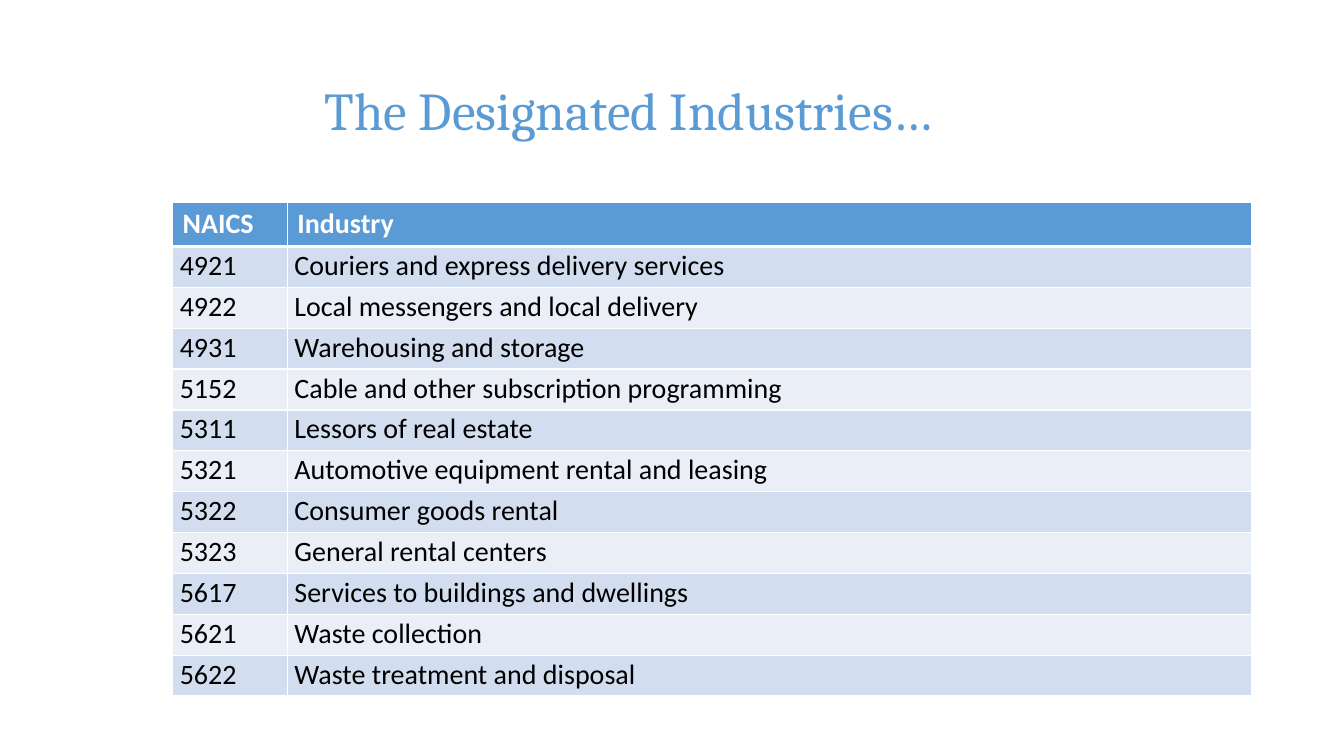
from dataclasses import dataclass

from lxml import etree
from pptx import Presentation
from pptx import util as u
from pptx.dml.color import RGBColor
from pptx.enum import text
from pptx.oxml.ns import qn


@dataclass(frozen=True)
class Theme:
    accent: str = "5B9BD5"
    bands: tuple[str, str] = ("D2DEEF", "EAEFF7")
    white: str = "FFFFFF"
    black: str = "000000"
    title_font: str = "Cambria"
    table_font: str = "Calibri"
    title_size: int = 38
    table_size: int = 20


@dataclass(frozen=True)
class Industry:
    code: str
    name: str


THEME = Theme()
HEADER = Industry("NAICS", "Industry")
INDUSTRIES = [
    Industry("4921", "Couriers and express delivery services"),
    Industry("4922", "Local messengers and local delivery"),
    Industry("4931", "Warehousing and storage"),
    Industry("5152", "Cable and other subscription programming"),
    Industry("5311", "Lessors of real estate"),
    Industry("5321", "Automotive equipment rental and leasing"),
    Industry("5322", "Consumer goods rental"),
    Industry("5323", "General rental centers"),
    Industry("5617", "Services to buildings and dwellings"),
    Industry("5621", "Waste collection"),
    Industry("5622", "Waste treatment and disposal"),
]
COLUMN_WIDTHS = (u.Cm(2.89), u.Cm(24.31))
HEADER_HEIGHT, ROW_HEIGHT = u.Cm(1.1), u.Cm(1.03)


def style_font(para, name: str, size: int, color: str, bold: bool = False) -> None:
    para.font.name = name
    para.font.size = u.Pt(size)
    para.font.bold = bold
    para.font.color.rgb = RGBColor.from_string(color)


def add_borders(cell, bottom: float, top: float) -> None:
    properties = cell._tc.get_or_add_tcPr()
    for side, width in (("L", 1), ("R", 1), ("T", top), ("B", bottom)):
        line = etree.SubElement(properties, qn(f"a:ln{side}"), w=str(u.Pt(width)))
        fill = etree.SubElement(line, qn("a:solidFill"))
        etree.SubElement(fill, qn("a:srgbClr"), val=THEME.white)


def fill_row(table, index: int, industry: Industry) -> None:
    is_header = index == 0
    background = THEME.accent if is_header else THEME.bands[(index - 1) % 2]
    table.rows[index].height = HEADER_HEIGHT if is_header else ROW_HEIGHT
    for column, words in enumerate((industry.code, industry.name)):
        cell = table.cell(index, column)
        add_borders(cell, bottom=3 if is_header else 1, top=3 if index == 1 else 1)
        cell.fill.solid()
        cell.fill.fore_color.rgb = RGBColor.from_string(background)
        para = cell.text_frame.paragraphs[0]
        para.text = words
        color = THEME.white if is_header else THEME.black
        style_font(para, THEME.table_font, THEME.table_size, color, is_header)
        if not is_header:
            cell.margin_left = cell.margin_right = u.Cm(0.18)
            cell.margin_top = cell.margin_bottom = 0
            para.line_spacing = 1.07


def add_title(page, words: str) -> None:
    title = page.shapes.title
    title.left, title.top = u.Cm(6.45), u.Cm(1.02)
    title.width, title.height = u.Cm(25.1), u.Cm(3.68)
    frame = title.text_frame
    frame.word_wrap = True
    frame.auto_size = text.MSO_AUTO_SIZE.NONE
    frame.vertical_anchor = text.MSO_ANCHOR.MIDDLE
    frame.margin_left = u.Cm(1.73)
    para = frame.paragraphs[0]
    para.text = words
    para.alignment = text.PP_ALIGN.LEFT
    para.line_spacing = 0.9
    style_font(para, THEME.title_font, THEME.title_size, THEME.accent)


def add_industry_table(page) -> None:
    records = [HEADER, *INDUSTRIES]
    height = HEADER_HEIGHT + ROW_HEIGHT * len(INDUSTRIES)
    table = page.shapes.add_table(
        len(records), len(COLUMN_WIDTHS), u.Cm(4.35), u.Cm(5.09),
        sum(COLUMN_WIDTHS), height,
    ).table
    for column, width in zip(table.columns, COLUMN_WIDTHS):
        column.width = width
    for index, industry in enumerate(records):
        fill_row(table, index, industry)


def main() -> None:
    # Deck and page
    deck = Presentation()
    deck.slide_width, deck.slide_height = u.Cm(33.87), u.Cm(19.05)
    page = deck.slides.add_slide(deck.slide_layouts.get_by_name("Title Only"))

    # Heading and table
    add_title(page, "The Designated Industries…")
    add_industry_table(page)
    deck.save("out.pptx")


if __name__ == "__main__":
    main()
